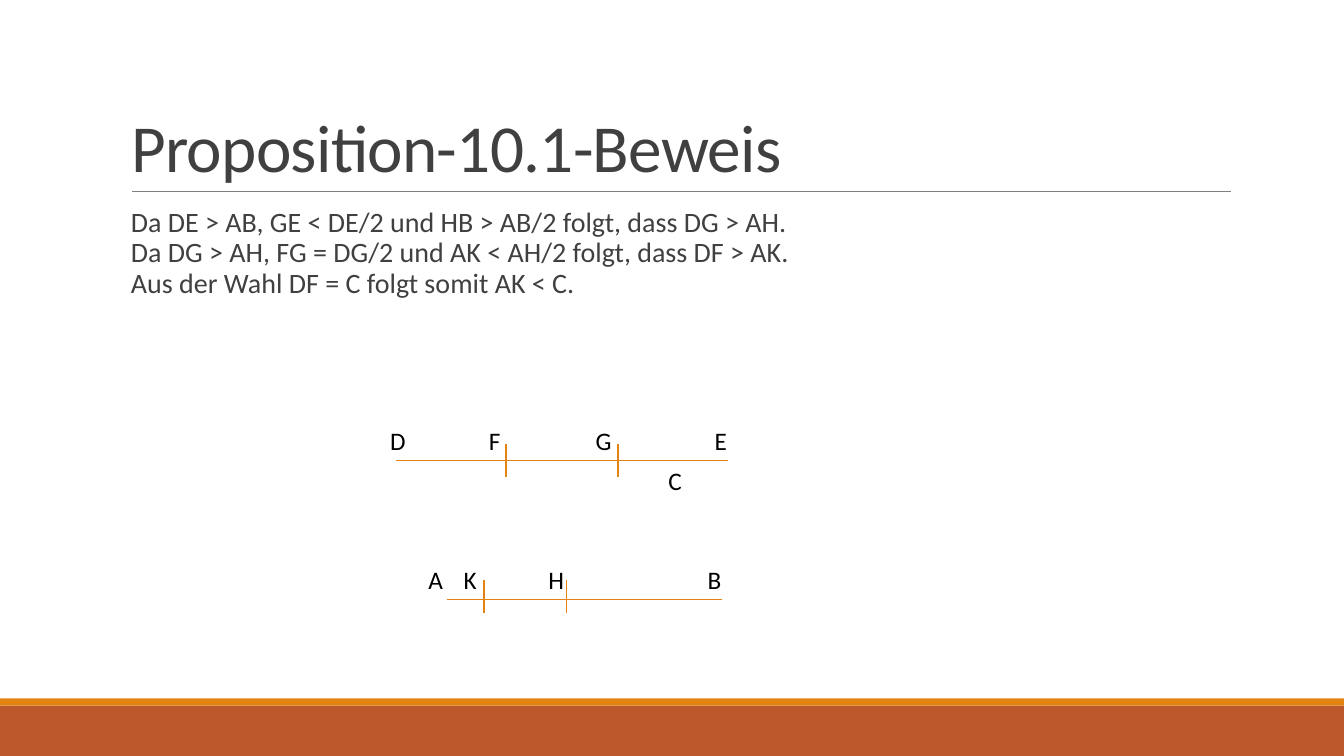
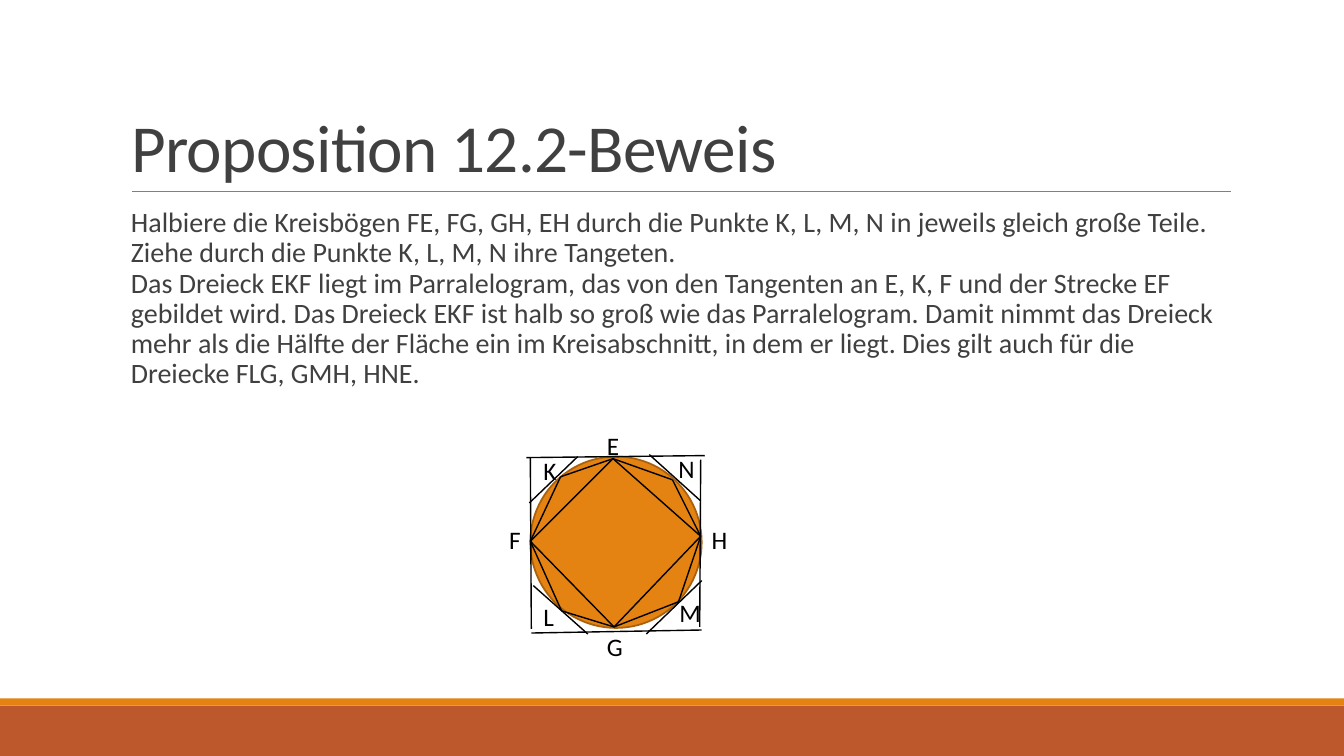
from lxml import etree
from pptx import Presentation
from pptx.dml.color import RGBColor
from pptx.enum import shapes, text
from pptx.oxml import ns
from pptx.util import Inches, Pt

RUST = RGBColor(0xBD, 0x58, 0x2C)
ORANGE = RGBColor(0xE4, 0x83, 0x12)
BROWN = RGBColor(0xA9, 0x61, 0x0D)
DARK = RGBColor(0x40, 0x40, 0x40)
GRAY = RGBColor(0x80, 0x80, 0x80)
BLACK = RGBColor(0, 0, 0)
FONT = "Calibri"
WIDTH, HEIGHT = 13.33, 7.5
TITLE_BOX = (1.2, 0.31, 11, 1.59)
BODY_BOX = (1.2, 2.02, 11, 4.3)
TITLE_ONLY = 5

BODY_SEGMENTS = (
    "Da DE > AB, GE < DE/2 und HB > AB/2 folgt, dass DG > AH.\n"
    "Da DG > AH, FG = DG/2 und AK < AH/2 folgt, dass DF > AK.\n"
    "Aus der Wahl DF = C folgt somit AK < C."
)
BODY_CIRCLE = (
    "Halbiere die Kreisbögen FE, FG, GH, EH durch die Punkte K, L, M, N in "
    "jeweils gleich große Teile.\n"
    "Ziehe durch die Punkte K, L, M, N ihre Tangeten.\n"
    "Das Dreieck EKF liegt im Parralelogram, das von den Tangenten an E, K, F "
    "und der Strecke EF gebildet wird. Das Dreieck EKF ist halb so groß wie das "
    "Parralelogram. Damit nimmt das Dreieck mehr als die Hälfte der Fläche ein "
    "im Kreisabschnitt, in dem er liegt. Dies gilt auch für die Dreiecke FLG, "
    "GMH, HNE."
)

# Circle figure, in inches from the corner of its box: point, label corner
CIRCLE_POINTS = {
    "E": ((0.82, 0.02), (0.66, -0.31)),
    "K": ((0.3, 0.2), (0.03, -0.06)),
    "F": ((0, 0.84), (-0.31, 0.62)),
    "L": ((0.31, 1.53), (0.03, 1.39)),
    "G": ((0.83, 1.69), (0.66, 1.68)),
    "M": ((1.47, 1.44), (1.38, 1.35)),
    "H": ((1.69, 0.79), (1.7, 0.62)),
    "N": ((1.41, 0.23), (1.37, -0.08)),
}
TANGENTS = {
    "E": ((-0.04, 0.01), (1.73, -0.01)),
    "K": ((-0.01, 0.46), (0.47, 0)),
    "F": ((0.01, 1.71), (0, 0.01)),
    "L": ((0.03, 1.28), (0.57, 1.76)),
    "G": ((0.01, 1.75), (1.7, 1.72)),
    "M": ((1.15, 1.76), (1.7, 1.23)),
    "H": ((1.68, 1.69), (1.69, 0.03)),
    "N": ((1.18, -0.02), (1.69, 0.44)),
}


def write(frame, words, size=18, color=BLACK, spacing=None, tracking=None,
          anchor=text.MSO_ANCHOR.TOP):
    """Fill a text frame with one left-aligned paragraph."""
    frame.word_wrap = True
    frame.auto_size = text.MSO_AUTO_SIZE.NONE
    frame.vertical_anchor = anchor
    para = frame.paragraphs[0]
    para.alignment = text.PP_ALIGN.LEFT
    para.line_spacing = spacing
    for number, line in enumerate(words.split("\n")):
        if number:
            para.add_line_break()
        span = para.add_run()
        span.text = line
        span.font.name = FONT
        span.font.size = Pt(size)
        span.font.color.rgb = color
        if tracking is not None:
            span.font._element.set("spc", str(round(tracking * 100)))


def add_text(page, box, words, **style):
    frame = page.shapes.add_textbox(*map(Inches, box)).text_frame
    write(frame, words, **style)


def add_label(page, left, top, letter):
    add_text(page, (left, top, 0.45, 0.4), letter)


def add_line(page, start, end, color, weight=1):
    line = page.shapes.add_connector(
        shapes.MSO_CONNECTOR.STRAIGHT, *map(Inches, (*start, *end)))
    line.line.color.rgb = color
    line.line.width = Pt(weight)
    etree.SubElement(line._element.spPr, ns.qn("a:effectLst"))


def add_filled(page, kind, box, fill, outline=None, weight=1.25):
    shape = page.shapes.add_shape(kind, *map(Inches, box))
    shape.shadow.inherit = False
    shape.fill.solid()
    shape.fill.fore_color.rgb = fill
    if outline is None:
        shape.line.fill.background()
    else:
        shape.line.color.rgb = outline
        shape.line.width = Pt(weight)


def add_page(deck, title, body):
    """Slide with bands, title, rule and body text."""
    page = deck.slides.add_slide(deck.slide_layouts[TITLE_ONLY])
    for top, height, color in ((7, 0.5, RUST), (6.93, 0.07, ORANGE)):
        add_filled(page, shapes.MSO_SHAPE.RECTANGLE,
                   (0, top, WIDTH, height), color)
    add_line(page, (1.31, 1.9), (12.21, 1.9), GRAY, weight=0.5)

    heading = page.shapes.title
    heading.left, heading.top, heading.width, heading.height = map(
        Inches, TITLE_BOX)
    write(heading.text_frame, title, size=48, color=DARK, spacing=0.85,
          tracking=-0.5, anchor=text.MSO_ANCHOR.BOTTOM)
    add_text(page, BODY_BOX, body, size=20, color=DARK, spacing=0.9)
    return page


def draw_segment(page, left, top, length, marks, labels, rise):
    """Line with division marks; labels stand above, rise is the mark height."""
    add_line(page, (left, top), (left + length, top), ORANGE)
    for offset in marks:
        across = left + offset
        add_line(page, (across, top - rise), (across, top - rise + 0.33), ORANGE)
    for letter, offset in labels.items():
        add_label(page, left + offset, top - 0.4, letter)


def draw_circle(page, left, top, size):
    """Circle with its inscribed square, octagon and tangents."""
    def place(point):
        return left + point[0], top + point[1]

    add_filled(page, shapes.MSO_SHAPE.OVAL, (left, top, size, size),
               ORANGE, outline=BROWN)
    octagon = [place(point) for point, _ in CIRCLE_POINTS.values()]
    for corners in (octagon[::2], octagon):
        for start, end in zip(corners, corners[1:] + corners[:1]):
            add_line(page, start, end, BLACK)
    for start, end in TANGENTS.values():
        add_line(page, place(start), place(end), BLACK)
    for letter, (_, corner) in CIRCLE_POINTS.items():
        add_label(page, *place(corner), letter)


def main():
    deck = Presentation()
    deck.slide_width, deck.slide_height = Inches(WIDTH), Inches(HEIGHT)

    # Two divided segments
    page = add_page(deck, "Proposition-10.1-Beweis", BODY_SEGMENTS)
    draw_segment(page, 3.93, 4.57, 3.29, marks=(1.09, 2.2), rise=0.17,
                 labels={"D": -0.16, "F": 0.82, "G": 1.88, "E": 3.06})
    add_label(page, 6.53, 4.57, "C")
    draw_segment(page, 4.43, 5.95, 2.73, marks=(0.37, 1.19), rise=0.2,
                 labels={"A": -0.28, "K": 0.07, "H": 0.91, "B": 2.49})

    # Circle with polygons
    page = add_page(deck, "Proposition 12.2-Beweis", BODY_CIRCLE)
    draw_circle(page, 5.26, 4.53, 1.7)

    deck.save("out.pptx")


if __name__ == "__main__":
    main()
